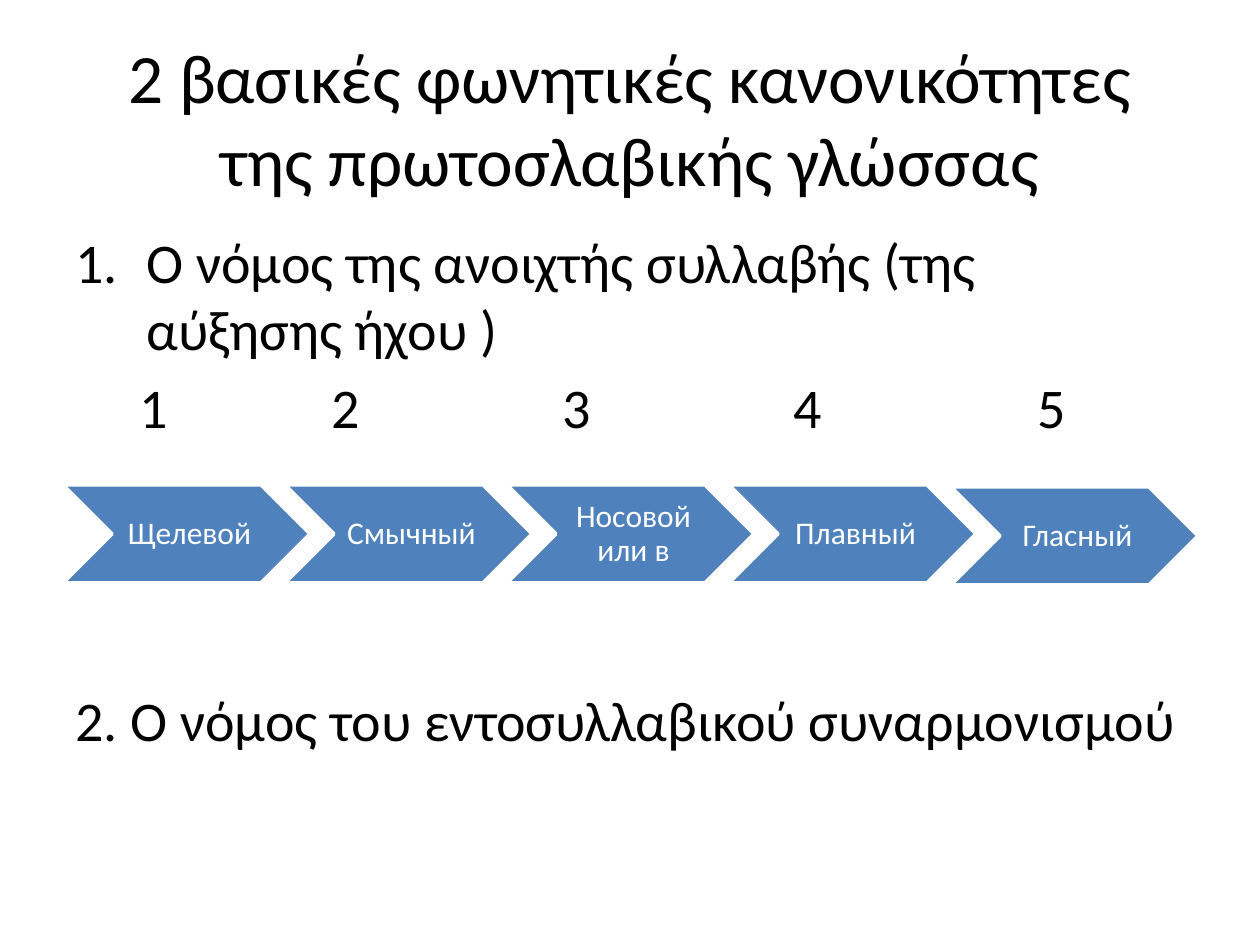
from lxml.etree import SubElement
from pptx import Presentation
from pptx.dml.color import RGBColor
from pptx.enum.shapes import MSO_SHAPE as Shape
from pptx.enum.text import MSO_ANCHOR as Anchor, PP_ALIGN as Align
from pptx.oxml.ns import qn
from pptx.util import Pt

PX = 914400 / 126
FONT = "Calibri"
BLACK, WHITE, BLUE = "000000", "FFFFFF", "4F81BD"

TITLE = "2 βασικές φωνητικές κανονικότητες της πρωτοσλαβικής γλώσσας"
FIRST_LAW = "Ο νόμος της ανοιχτής συλλαβής (της\vαύξησης ήχου )"
SECOND_LAW = "2. Ο νόμος του εντοσυλλαβικού συναρμονισμού"
SOUNDS = ["Щелевой", "Смычный", "Носовой или в", "Плавный", "Гласный"]
NUMBER_TABS = [64, 256, 487, 718, 962]

MARGIN, CONTENT_WIDTH = 63, 1134
CHEVRON_TOP, CHEVRON_WIDTH, CHEVRON_HEIGHT, CHEVRON_STEP = 485, 247, 98, 222
LAST_DROP = 2


def px(length):
    return round(length * PX)


def color(value):
    return RGBColor.from_string(value)


def style(para, size, font_color):
    for span in para.runs:
        span.font.name = FONT
        span.font.size = Pt(size)
        span.font.color.rgb = color(font_color)


def add_box(page, left, top, width, height):
    box = page.shapes.add_textbox(px(left), px(top), px(width), px(height))
    box.text_frame.word_wrap = True
    return box.text_frame


def add_title(page):
    frame = add_box(page, MARGIN, 38, CONTENT_WIDTH, 158)
    frame.vertical_anchor = Anchor.MIDDLE
    frame.text = TITLE
    para = frame.paragraphs[0]
    para.alignment = Align.CENTER
    style(para, 39.6, BLACK)


def set_number(para, hang):
    props = para._p.get_or_add_pPr()
    props.set("marL", str(px(hang)))
    props.set("indent", str(-px(hang)))
    SubElement(props, qn("a:buFont"), typeface="+mj-lt")
    SubElement(props, qn("a:buAutoNum"), type="arabicPeriod")


def set_tabs(para, stops):
    tabs = SubElement(para._p.get_or_add_pPr(), qn("a:tabLst"))
    for stop in stops:
        SubElement(tabs, qn("a:tab"), pos=str(px(stop)), algn="l")


def add_laws(page):
    frame = add_box(page, MARGIN, 221, CONTENT_WIDTH, 624)
    numbers = "".join(f"\t{i}" for i in range(1, len(SOUNDS) + 1))
    lines = [(FIRST_LAW, 6.4), (numbers, 6.4), (SECOND_LAW, 140)]
    for i, (text, gap) in enumerate(lines):
        para = frame.add_paragraph() if i else frame.paragraphs[0]
        para.text = text
        para.space_before = Pt(gap)
        style(para, 32, BLACK)
    set_number(frame.paragraphs[0], 71)
    set_tabs(frame.paragraphs[1], NUMBER_TABS)


def add_chevron(page, text, left, top):
    chevron = page.shapes.add_shape(
        Shape.CHEVRON, px(left), px(top), px(CHEVRON_WIDTH), px(CHEVRON_HEIGHT))
    chevron.shadow.inherit = False
    chevron.fill.solid()
    chevron.fill.fore_color.rgb = color(BLUE)
    chevron.line.color.rgb = color(WHITE)
    chevron.line.width = Pt(2)

    frame = chevron.text_frame
    frame.word_wrap = True
    frame.vertical_anchor = Anchor.MIDDLE
    frame.margin_left = px(10)
    frame.margin_top = frame.margin_right = frame.margin_bottom = px(4)
    frame.text = text
    para = frame.paragraphs[0]
    para.alignment = Align.CENTER
    para.line_spacing = 0.9
    style(para, 18, WHITE)


def main():
    deck = Presentation()
    deck.slide_width, deck.slide_height = px(1260), px(945)
    page = deck.slides.add_slide(deck.slide_layouts[6])

    # Heading and the two laws
    add_title(page)
    add_laws(page)

    # Row of sounds in order of rising sonority, the last slightly lower
    for i, sound in enumerate(SOUNDS):
        drop = LAST_DROP if i == len(SOUNDS) - 1 else 0
        add_chevron(page, sound, MARGIN + i * CHEVRON_STEP, CHEVRON_TOP + drop)

    deck.save("out.pptx")


if __name__ == "__main__":
    main()
